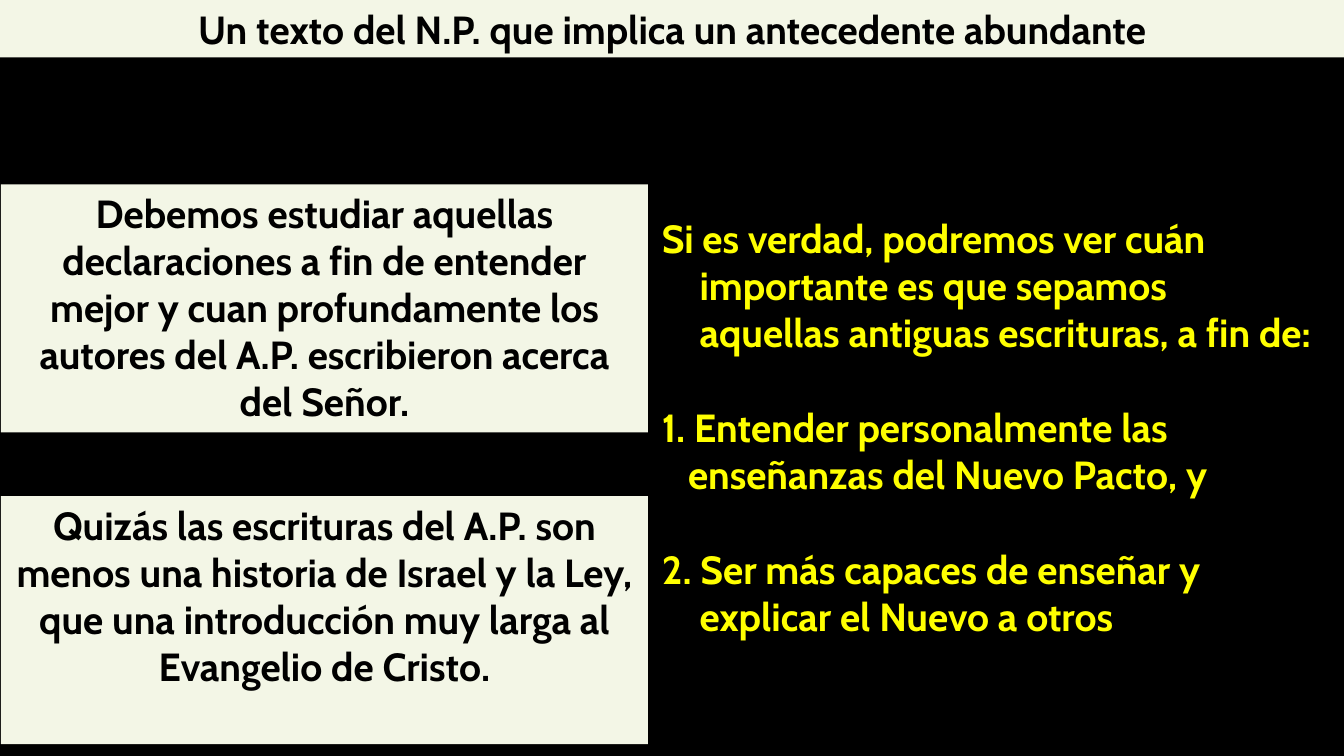
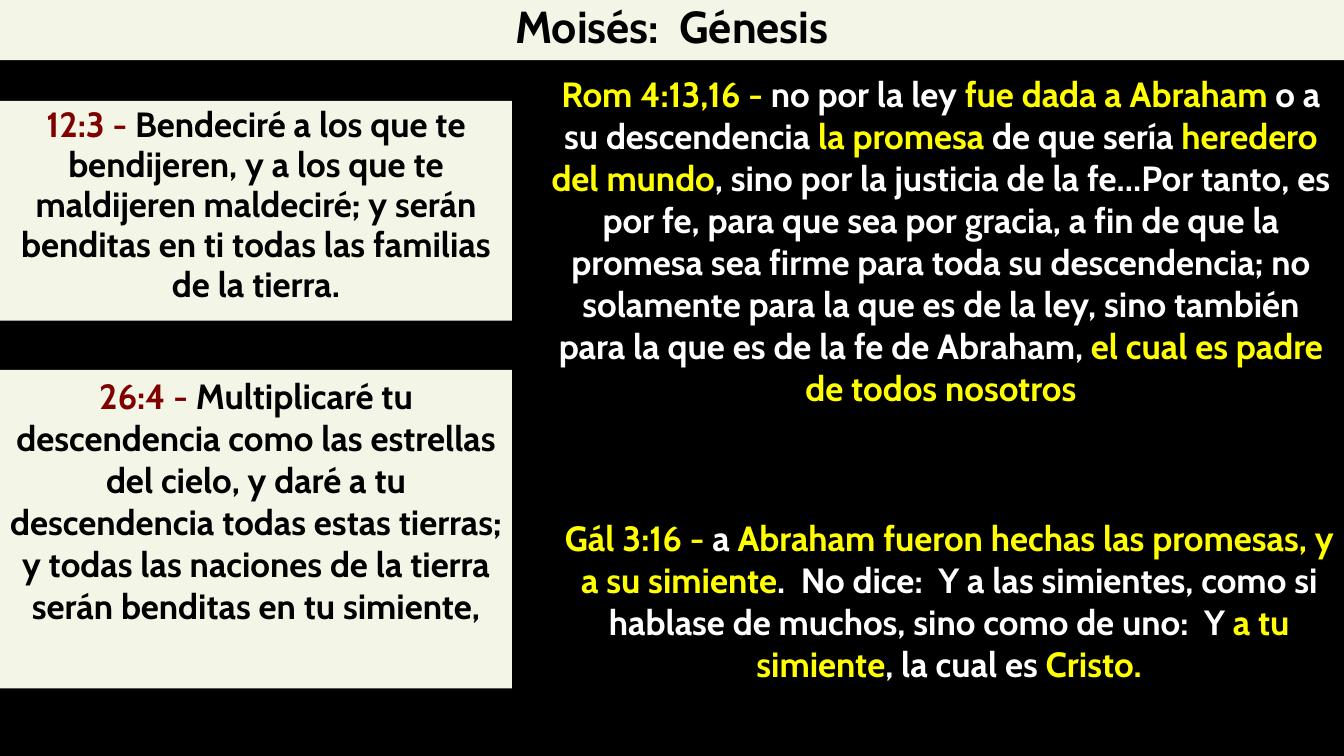
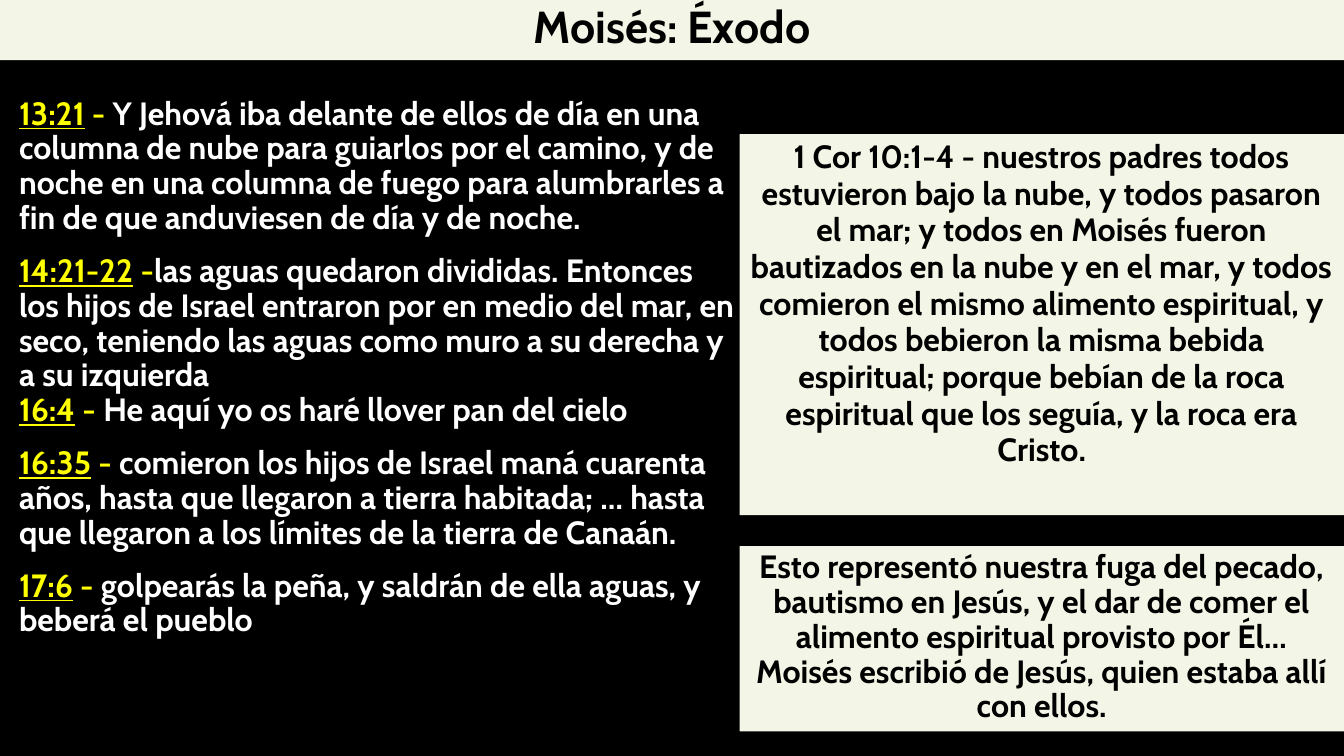
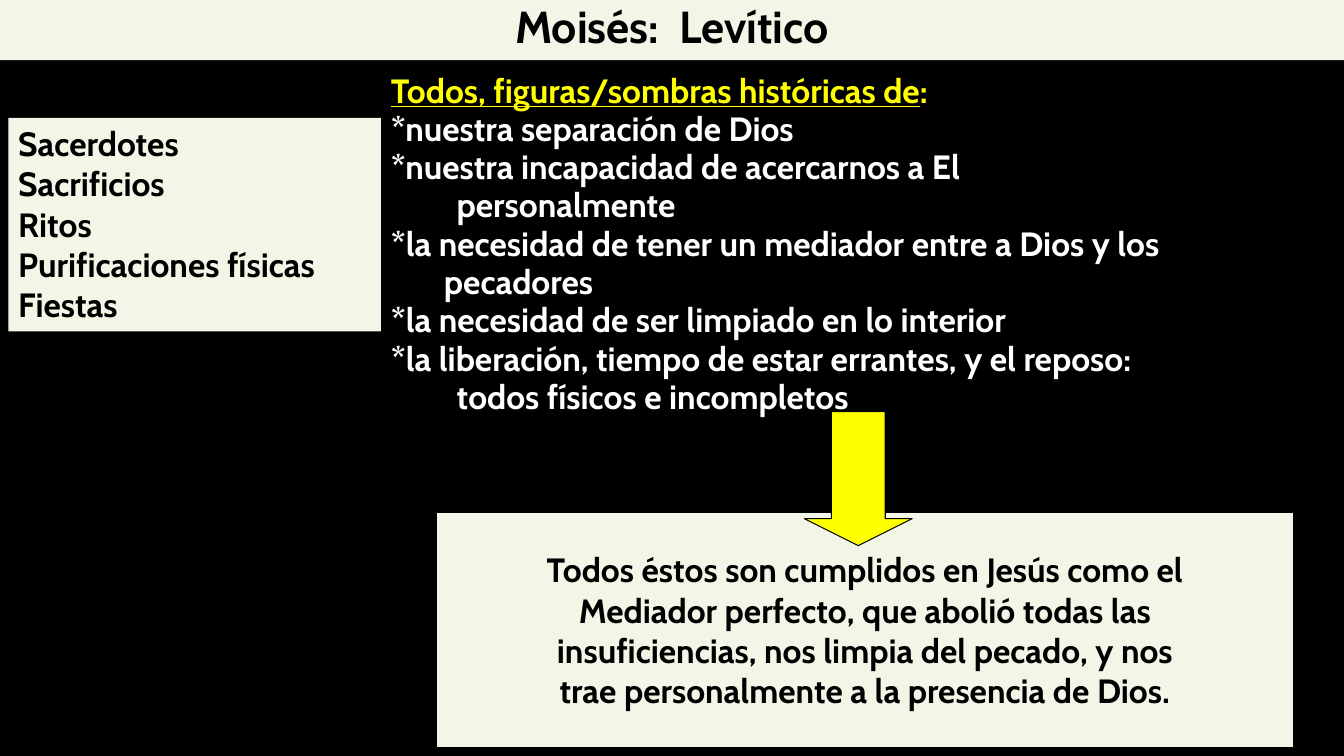
import dataclasses
import itertools

import pptx
import pptx.dml.color
import pptx.enum.shapes
import pptx.enum.text
import pptx.util

Cm = pptx.util.Cm
Pt = pptx.util.Pt
Shape = pptx.enum.shapes.MSO_SHAPE
Align = pptx.enum.text.PP_ALIGN
Anchor = pptx.enum.text.MSO_ANCHOR

WIDE, HIGH = 33.87, 19.05
FONT = "Cabin"
BLACK, WHITE, YELLOW = "000000", "FFFFFF", "FFFF00"
CREAM, MAROON = "F3F6E6", "800000"


@dataclasses.dataclass
class Para:
    runs: list
    left: float = 0
    hang: float = 0
    gap: float = 0


def plain(text, hue=BLACK, **rest):
    return Para([(text, hue, False)], **rest)


def mixed(text, first, second):
    hues = itertools.cycle([first, second])
    return Para([(part, hue, False) for part, hue in zip(text.split("|"), hues)])


def marked(mark, dash, text="", **rest):
    runs = [(mark, YELLOW, True), (dash, YELLOW, False)]
    if text:
        runs.append((text, WHITE, False))
    return Para(runs, **rest)


def color(code):
    return pptx.dml.color.RGBColor.from_string(code)


def new_slide(deck):
    slide = deck.slides.add_slide(deck.slide_layouts[6])
    slide.background.fill.solid()
    slide.background.fill.fore_color.rgb = color(BLACK)
    return slide


def write(frame, paras, size, lines=1.0, align=Align.LEFT):
    frame.word_wrap = True
    frame.vertical_anchor = Anchor.TOP
    for index, item in enumerate(paras):
        para = frame.add_paragraph() if index else frame.paragraphs[0]
        para.alignment = align
        para.line_spacing = lines
        para.space_before = Pt(item.gap)
        props = para._p.get_or_add_pPr()
        props.set("marL", str(Cm(item.left)))
        props.set("indent", str(-Cm(item.hang)))
        for text, hue, under in item.runs:
            run = para.add_run()
            run.text = text
            font = run.font
            font.name, font.size, font.bold = FONT, Pt(size), True
            font.underline = under
            font.color.rgb = color(hue)


def add_form(slide, kind, place, fill, edge=None):
    form = slide.shapes.add_shape(kind, *map(Cm, place))
    form.shadow.inherit = False
    form.fill.solid()
    form.fill.fore_color.rgb = color(fill)
    if edge:
        form.line.color.rgb = color(edge)
        form.line.width = Pt(0.75)
    else:
        form.line.fill.background()
    return form


def add_panel(slide, place, paras, size, lines=1.0, align=Align.CENTER, edge=None):
    panel = add_form(slide, Shape.RECTANGLE, place, CREAM, edge)
    write(panel.text_frame, paras, size, lines, align)
    return panel


def add_text(slide, place, paras, size, lines=1.0, align=Align.LEFT):
    box = slide.shapes.add_textbox(*map(Cm, place))
    write(box.text_frame, paras, size, lines, align)


def add_title(slide, text, size=32, lines=0.9, high=1.52):
    add_panel(slide, (0, 0, WIDE, high), [plain(text)], size, lines)


def intro(deck):
    slide = new_slide(deck)
    texts = [
        "Debemos estudiar aquellas declaraciones a fin de entender mejor y cuan profundamente los autores del A.P. escribieron acerca del Señor.",
        "Quizás las escrituras del A.P. son menos una historia de Israel y la Ley, que una introducción muy larga al Evangelio de Cristo.",
    ]
    for index, text in enumerate(texts):
        add_panel(slide, (0.02, 4.65 + 7.85 * index, 16.31, 6.25), [plain(text)], 28)
    add_text(slide, (16.43, 5.28, 16.94, 12.22), [
        plain("Si es verdad, podremos ver cuán importante es que sepamos aquellas antiguas escrituras, a fin de:", YELLOW, left=0.95, hang=0.95),
        plain("1. Entender personalmente las enseñanzas del Nuevo Pacto, y", YELLOW, left=0.66, hang=0.66, gap=34),
        plain("2. Ser más capaces de enseñar y explicar el Nuevo a otros", YELLOW, left=0.95, hang=0.95, gap=34),
    ], 28)
    add_title(slide, "Un texto del N.P. que implica un antecedente abundante", 28, 1.0, 1.45)


def genesis(deck):
    slide = new_slide(deck)
    add_panel(slide, (0, 2.54, 12.9, 5.54), [mixed(
        "12:3 - |Bendeciré a los que te bendijeren, y a los que te maldijeren maldeciré; y serán benditas en ti todas las familias de la tierra.",
        MAROON, BLACK)], 25, 0.95)
    add_panel(slide, (0, 9.32, 12.9, 8.03), [mixed(
        "26:4 - |Multiplicaré tu descendencia como las estrellas del cielo, y daré a tu descendencia todas estas tierras; y todas las naciones de la tierra serán benditas en tu simiente,",
        MAROON, BLACK)], 25)
    add_text(slide, (13.55, 1.7, 20.32, 9.88), [mixed(
        "Rom 4:13,16 - |no por la ley |fue dada a Abraham| o a su descendencia |la promesa| de que sería |heredero del mundo|, sino por la justicia de la fe…Por tanto, es por fe, para que sea por gracia, a fin de que la promesa sea firme para toda su descendencia; no solamente para la que es de la ley, sino también para la que es de la fe de Abraham, |el cual es padre de todos nosotros",
        YELLOW, WHITE)], 25, align=Align.CENTER)
    add_text(slide, (13.76, 12.9, 20.32, 5.82), [mixed(
        "Gál 3:16 - |a |Abraham fueron hechas las promesas, y a su simiente|.  No dice:  Y a las simientes, como si hablase de muchos, sino como de uno:  Y |a tu simiente|, la cual es |Cristo.",
        YELLOW, WHITE)], 25, align=Align.CENTER)
    add_title(slide, "Moisés:  Génesis")


def exodus(deck):
    slide = new_slide(deck)
    add_text(slide, (0.23, 2.33, 18.62, 16.7), [
        marked("13:21", " - ", "Y Jehová iba delante de ellos de día en una columna de nube para guiarlos por el camino, y de noche en una columna de fuego para alumbrarles a fin de que anduviesen de día y de noche."),
        marked("14:21-22", " -", "las aguas quedaron divididas. Entonces los hijos de Israel entraron por en medio del mar, en seco, teniendo las aguas como muro a su derecha y a su izquierda", gap=13),
        marked("16:4", " - ", "He aquí yo os haré llover pan del cielo"),
        marked("16:35", " - ", "comieron los hijos de Israel maná cuarenta años, hasta que llegaron a tierra habitada; … hasta que llegaron a los límites de la tierra de Canaán.", gap=13),
        marked("17:6", " - ", "golpearás la peña, y saldrán de ella aguas, y beberá el pueblo", gap=13),
    ], 23, 0.9)
    left = 18.64
    add_panel(slide, (left, 3.38, WIDE - left, 9.6), [plain(
        "1 Cor 10:1-4 - nuestros padres todos estuvieron bajo la nube, y todos pasaron el mar; y todos en Moisés fueron bautizados en la nube y en el mar, y todos comieron el mismo alimento espiritual, y todos bebieron la misma bebida espiritual; porque bebían de la roca espiritual que los seguía, y la roca era Cristo.")], 23, 0.95)
    add_panel(slide, (left, 13.76, WIDE - left, 4.67), [plain(
        "Esto representó nuestra fuga del pecado, bautismo en Jesús, y el dar de comer el alimento espiritual provisto por Él…Moisés escribió de Jesús, quien estaba allí con ellos.")], 23, 0.9)
    add_title(slide, "Moisés: Éxodo")


def levites(deck):
    slide = new_slide(deck)
    rites = ["Sacerdotes", "Sacrificios", "Ritos", "Purificaciones físicas", "Fiestas"]
    add_panel(slide, (0.21, 2.97, 9.39, 5.38), [plain(text) for text in rites], 24, align=Align.LEFT)
    types = [
        ("*nuestra separación de Dios", 0),
        ("*nuestra incapacidad de acercarnos a El", 0),
        ("personalmente", 1.66),
        ("*la necesidad de tener un mediador entre a Dios y los", 0),
        ("pecadores", 1.34),
        ("*la necesidad de ser limpiado en lo interior", 0),
        ("*la liberación, tiempo de estar errantes, y el reposo:", 0),
        ("todos físicos e incompletos", 1.66),
    ]
    head = marked("Todos, figuras/sombras históricas de", ":")
    body = [plain(text, WHITE, left=left) for text, left in types]
    add_text(slide, (9.6, 1.7, 24.05, 9.02), [head] + body, 24, 0.95)
    ending = [
        "Todos éstos son cumplidos en Jesús como el",
        "Mediador perfecto, que abolió todas las",
        "insuficiencias, nos limpia del pecado, y nos",
        "trae personalmente a la presencia de Dios.",
    ]
    panel = add_panel(slide, (11, 12.91, 21.59, 5.92), [plain(text) for text in ending], 24, edge=BLACK)
    panel.text_frame.vertical_anchor = Anchor.MIDDLE
    panel.text_frame.word_wrap = False
    arrow = add_form(slide, Shape.DOWN_ARROW, (20.27, 10.37, 2.72, 3.38), YELLOW, BLACK)
    arrow.adjustments[0] = 0.5
    arrow.adjustments[1] = 0.25
    add_title(slide, "Moisés:  Levítico")


def main():
    deck = pptx.Presentation()
    deck.slide_width, deck.slide_height = Cm(WIDE), Cm(HIGH)
    for build in (intro, genesis, exodus, levites):
        build(deck)
    deck.save("out.pptx")


if __name__ == "__main__":
    main()
